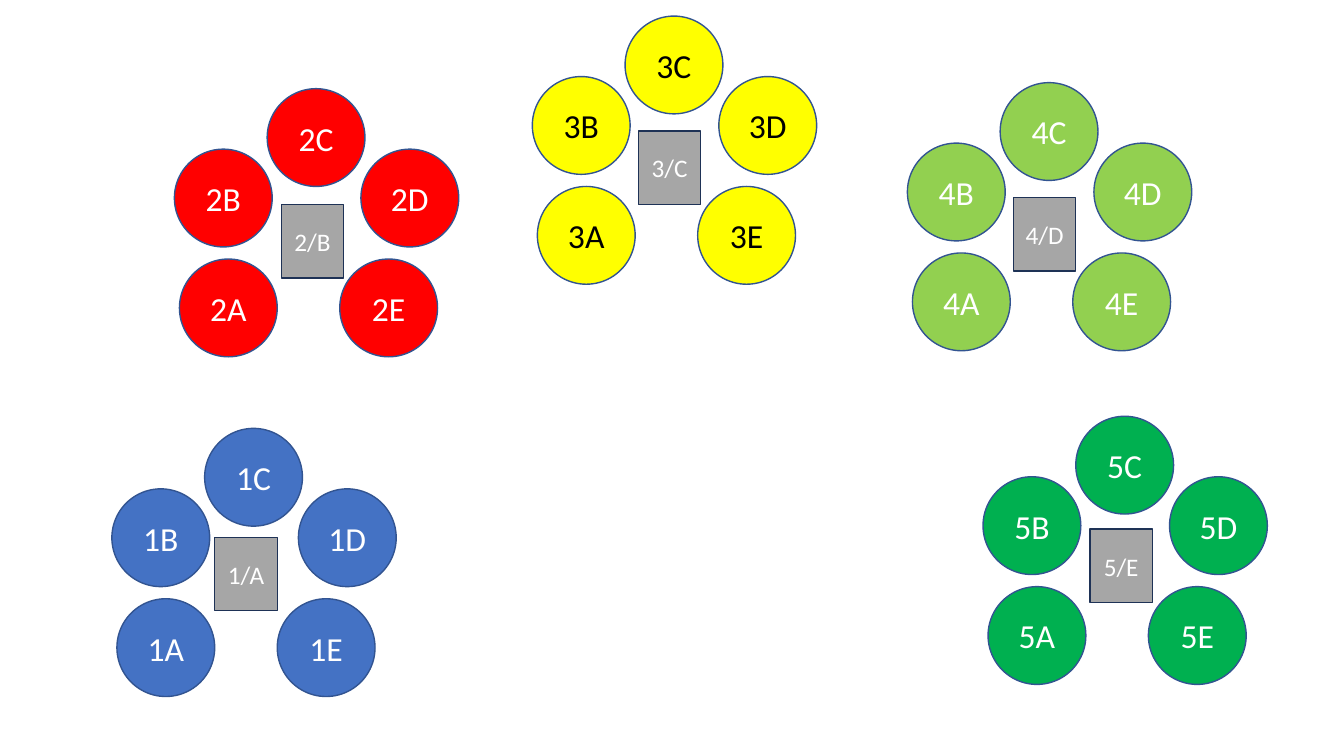
from pptx import Presentation
from pptx.dml.color import RGBColor
from pptx.enum.shapes import MSO_SHAPE
from pptx.enum.text import MSO_ANCHOR, PP_ALIGN
from pptx.util import Inches, Pt

OVAL, RECTANGLE = MSO_SHAPE.OVAL, MSO_SHAPE.RECTANGLE
MIDDLE, CENTER = MSO_ANCHOR.MIDDLE, PP_ALIGN.CENTER

# Teams: number, left and top of the ring, seat fill, seat text colour
TEAMS = [
    ("1", 1.11, 4.25, "4472C4", "FFFFFF"),
    ("3", 5.28, 0.16, "FFFF00", "000000"),
    ("2", 1.73, 0.88, "FF0000", "FFFFFF"),
    ("4", 9.00, 0.82, "92D050", "FFFFFF"),
    ("5", 9.75, 4.13, "00B050", "FFFFFF"),
]

# Seats: letter and offset from the ring's left and top
SEATS = [("A", 0.05, 1.69), ("E", 1.64, 1.69), ("B", 0, 0.6),
         ("C", 0.92, 0), ("D", 1.85, 0.6)]

# Tables: label, left, top
TABLES = [("1/A", 2.13, 5.33), ("2/B", 2.79, 2.03), ("3/C", 6.33, 1.3),
          ("4/D", 10.05, 1.96), ("5/E", 10.81, 5.25)]

SEAT_SIZE = 0.97
TABLE_WIDTH, TABLE_HEIGHT = 0.62, 0.73
SEAT_LINE, TABLE_FILL, TABLE_LINE = "325491", "A6A6A6", "1E3256"


def color(hex_code):
    return RGBColor.from_string(hex_code)


def add_labelled(slide, kind, label, bounds, fill, line, ink, size):
    box = slide.shapes.add_shape(kind, *(Inches(length) for length in bounds))
    box.shadow.inherit = False
    box.fill.solid()
    box.fill.fore_color.rgb = color(fill)
    box.line.color.rgb = color(line)
    box.line.width = Pt(1)
    frame = box.text_frame
    frame.text = label
    frame.vertical_anchor = MIDDLE
    para = frame.paragraphs[0]
    para.alignment = CENTER
    font = para.runs[0].font
    font.name, font.size = "Calibri", Pt(size)
    font.color.rgb = color(ink)


def main():
    deck = Presentation()
    deck.slide_width, deck.slide_height = Inches(13.33), Inches(7.5)
    page = deck.slides.add_slide(deck.slide_layouts[6])

    # Rings of five seats
    for number, left, top, fill, ink in TEAMS:
        for letter, right, down in SEATS:
            bounds = (left + right, top + down, SEAT_SIZE, SEAT_SIZE)
            add_labelled(page, OVAL, number + letter, bounds,
                         fill, SEAT_LINE, ink, 24)

    # Tables in the middle of the rings
    for label, left, top in TABLES:
        bounds = (left, top, TABLE_WIDTH, TABLE_HEIGHT)
        add_labelled(page, RECTANGLE, label, bounds,
                     TABLE_FILL, TABLE_LINE, "FFFFFF", 18)

    deck.save("out.pptx")


if __name__ == "__main__":
    main()
